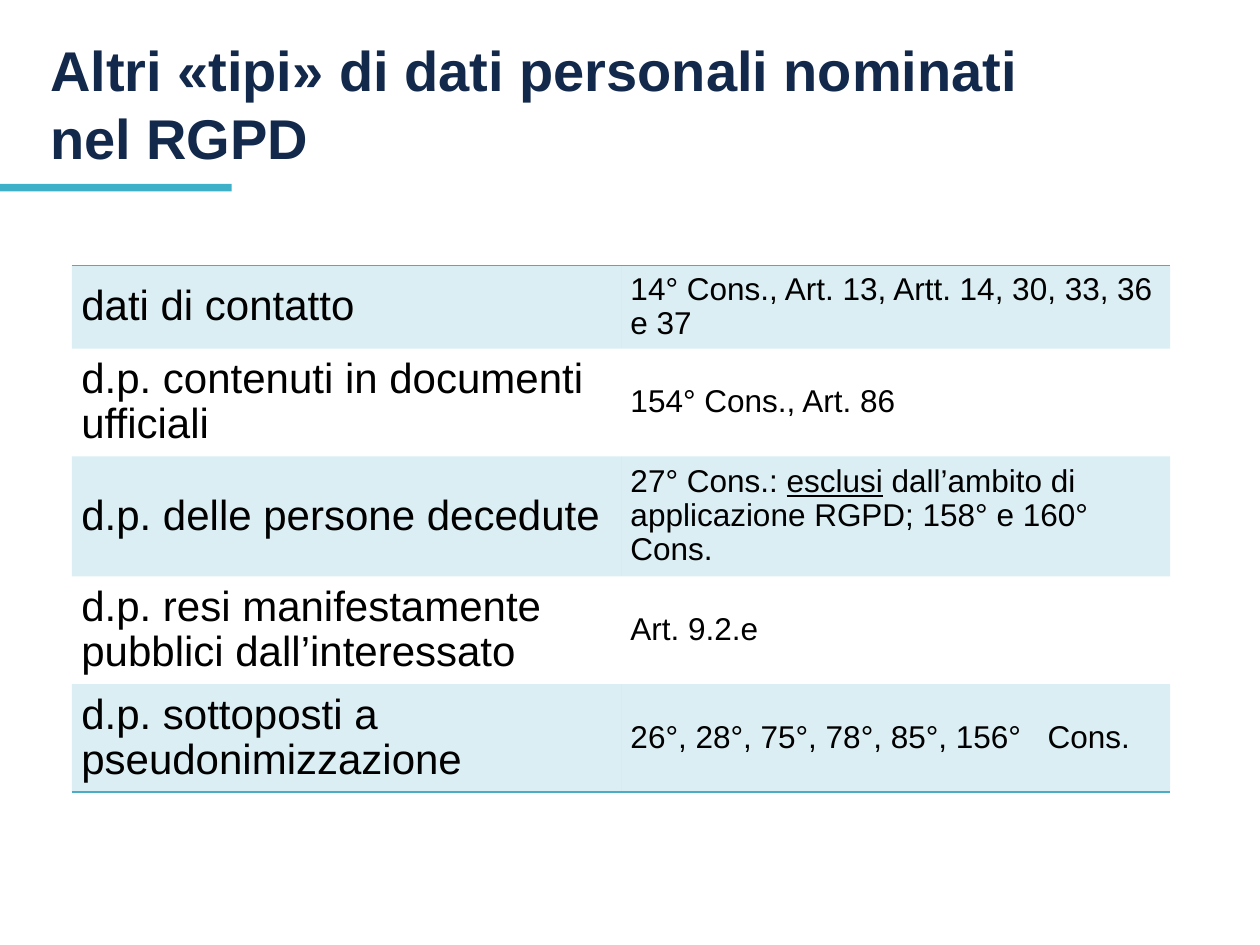
from dataclasses import dataclass

from lxml.etree import SubElement
from pptx import Presentation
from pptx.dml.color import RGBColor
from pptx.enum.shapes import MSO_SHAPE
from pptx.enum.text import MSO_ANCHOR
from pptx.oxml import parse_xml
from pptx.oxml.ns import nsdecls, qn
from pptx.util import Cm, Pt


@dataclass(frozen=True)
class Theme:
    """Colours, font and type sizes of the slide."""
    font: str = "Arial"
    title: str = "13294B"
    bar: str = "3EB1C8"
    accent: str = "4BACC6"
    text: str = "000000"
    title_size: int = 32
    label_size: int = 24
    reference_size: int = 18
    table_spacing: float = 0.97
    tint_percent: int = 20


@dataclass(frozen=True)
class Row:
    """One kind of personal data with its references."""
    label: str
    reference: str
    height: float
    underlined: str = ""
    tab_stop: float = 0


THEME = Theme()
PLAIN_STYLE = "{2D5ABB26-0587-4C30-8999-92F81FD0307C}"
ROWS = [
    Row("dati di contatto", "14° Cons., Art. 13, Artt. 14, 30, 33, 36 e 37", 1.61),
    Row("d.p. contenuti in documenti ufficiali", "154° Cons., Art. 86", 2.08),
    Row("d.p. delle persone decedute",
        "27° Cons.: esclusi dall’ambito di applicazione RGPD; 158° e 160° Cons.",
        2.31, underlined="esclusi"),
    Row("d.p. resi manifestamente pubblici dall’interessato", "Art. 9.2.e", 2.08),
    Row("d.p. sottoposti a pseudonimizzazione",
        "26°, 28°, 75°, 78°, 85°, 156°\tCons.", 2.08, tab_stop=8.41),
]


def write_text(frame, text: str, *, size: int, color: str, bold: bool = False,
               spacing: float = 1.0, underlined: str = "", tab_stop: float = 0) -> None:
    """Write one paragraph, optionally with an underlined part and a tab stop."""
    paragraph = frame.paragraphs[0]
    paragraph.line_spacing = spacing
    if tab_stop:
        properties = paragraph._p.get_or_add_pPr()
        stops = SubElement(properties, qn("a:tabLst"))
        SubElement(stops, qn("a:tab"), pos=str(Cm(tab_stop)), algn="l")
    parts = text.partition(underlined) if underlined else (text,)
    for part in parts:
        span = paragraph.add_run()
        span.text = part
        span.font.name = THEME.font
        span.font.size = Pt(size)
        span.font.bold = bold
        span.font.underline = bool(underlined) and part == underlined
        span.font.color.rgb = RGBColor.from_string(color)


def tint_cell(cell) -> None:
    """Fill a cell with the transparent accent colour."""
    cell.fill.solid()
    cell.fill.fore_color.rgb = RGBColor.from_string(THEME.accent)
    color = cell._tc.tcPr.find(f"{qn('a:solidFill')}/{qn('a:srgbClr')}")
    SubElement(color, qn("a:alpha"), val=str(THEME.tint_percent * 1000))


def rule_cell(cell, side: str) -> None:
    """Draw an accent line on one side of a cell."""
    line = parse_xml(
        f'<a:{side} {nsdecls("a")} w="{Pt(1)}"><a:solidFill>'
        f'<a:srgbClr val="{THEME.accent}"/></a:solidFill></a:{side}>')
    cell._tc.get_or_add_tcPr().insert(0, line)


def add_title(page, text: str) -> None:
    """Add the title and the bar below it."""
    bar = page.shapes.add_shape(MSO_SHAPE.RECTANGLE, Cm(0), Cm(3.71), Cm(4.67), Cm(0.15))
    bar.shadow.inherit = False
    bar.fill.solid()
    bar.fill.fore_color.rgb = RGBColor.from_string(THEME.bar)
    bar.line.fill.background()
    box = page.shapes.add_textbox(Cm(0.76), Cm(0.81), Cm(20.62), Cm(2.75))
    box.text_frame.word_wrap = True
    box.text_frame.vertical_anchor = MSO_ANCHOR.BOTTOM
    write_text(box.text_frame, text, size=THEME.title_size, color=THEME.title, bold=True)


def add_data_table(page, rows: list[Row]) -> None:
    """Add the two-column table with tinted alternate rows."""
    height = Cm(sum(row.height for row in rows))
    table = page.shapes.add_table(len(rows), 2, Cm(1.45), Cm(5.35), Cm(22.14), height).table
    table.first_row = table.horz_banding = False
    table._tbl.tblPr.find(qn("a:tableStyleId")).text = PLAIN_STYLE
    for index, row in enumerate(rows):
        table.rows[index].height = Cm(row.height)
        label, reference = table.cell(index, 0), table.cell(index, 1)
        for cell in (label, reference):
            cell.vertical_anchor = MSO_ANCHOR.MIDDLE
            cell.margin_left = cell.margin_right = Cm(0.19)
            cell.margin_top = cell.margin_bottom = Cm(0.1)
            if index % 2 == 0:
                tint_cell(cell)
            else:
                cell.fill.background()
            if index == 0:
                rule_cell(cell, "lnT")
            if index == len(rows) - 1:
                rule_cell(cell, "lnB")
        write_text(label.text_frame, row.label, size=THEME.label_size,
                   color=THEME.text, spacing=THEME.table_spacing)
        write_text(reference.text_frame, row.reference, size=THEME.reference_size,
                   color=THEME.text, spacing=THEME.table_spacing,
                   underlined=row.underlined, tab_stop=row.tab_stop)


def main() -> None:
    """Build and save the slide."""
    deck = Presentation()
    deck.slide_width, deck.slide_height = Cm(25.4), Cm(19.05)
    page = deck.slides.add_slide(deck.slide_layouts[6])
    add_title(page, "Altri «tipi» di dati personali nominati nel RGPD")
    add_data_table(page, ROWS)
    deck.save("out.pptx")


if __name__ == "__main__":
    main()
